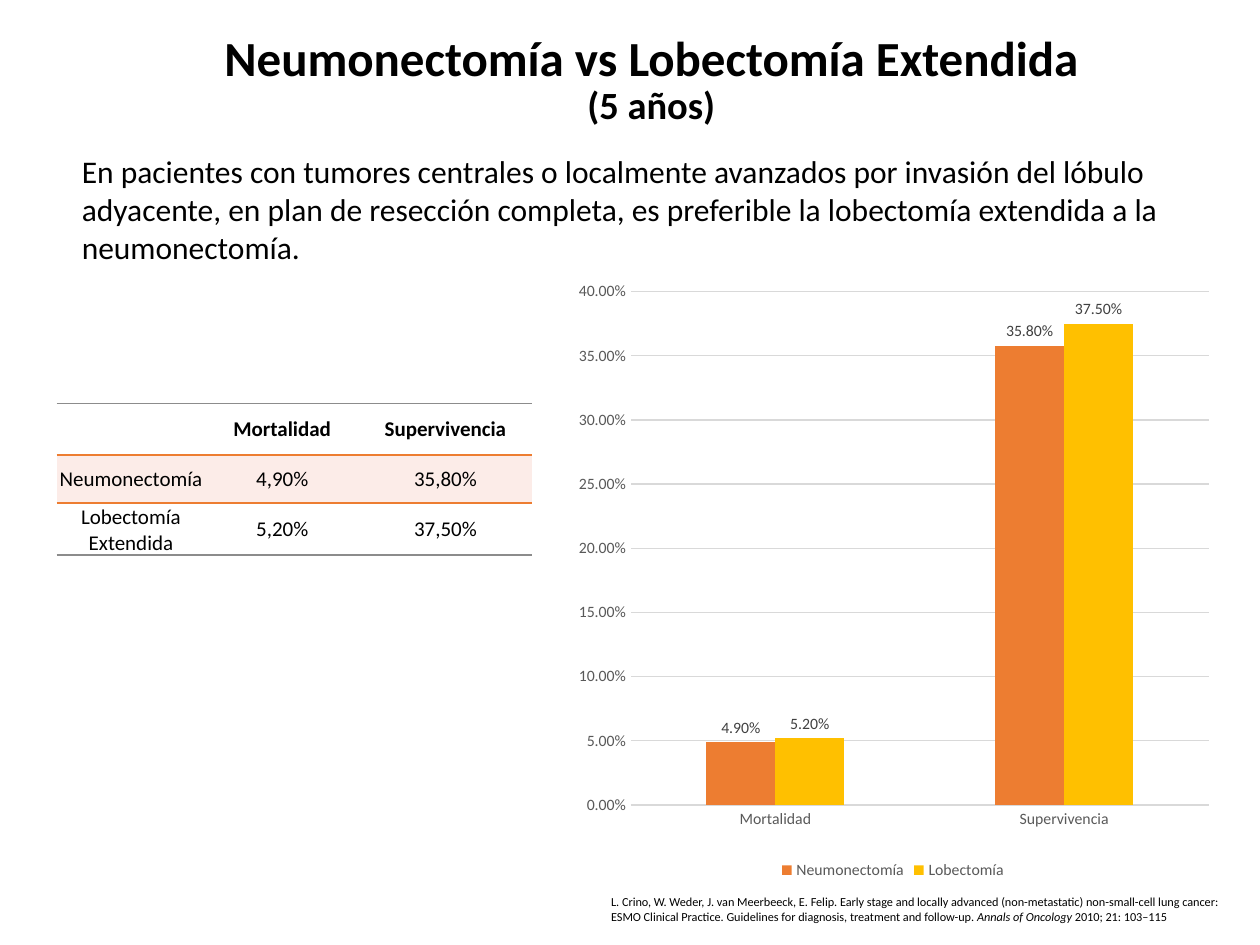
from dataclasses import dataclass

import pptx
import pptx.chart.data
import pptx.dml.color
import pptx.enum.chart
import pptx.enum.text
import pptx.oxml
import pptx.oxml.ns
import pptx.util
from lxml import etree

Cm = pptx.util.Cm
Pt = pptx.util.Pt
ALIGN = pptx.enum.text.PP_ALIGN
MIDDLE = pptx.enum.text.MSO_ANCHOR.MIDDLE


@dataclass(frozen=True)
class Theme:
    font: str = "Calibri"
    ink: str = "000000"
    label: str = "404040"
    axis: str = "595959"
    grid: str = "D9D9D9"
    rule: str = "8C8C8C"
    band: str = "FCECE8"
    orange: str = "ED7D31"
    gold: str = "FFC000"
    title: int = 28
    years: int = 22
    body: int = 18
    cell: int = 12
    chart: int = 9
    cite: int = 7


THEME = Theme()


def rgb(code):
    return pptx.dml.color.RGBColor.from_string(code)


def style(font, size, color=THEME.ink, bold=False):
    font.name = THEME.font
    font.size = Pt(size)
    font.bold = bold
    font.color.rgb = rgb(color)


def add_title(slide, main, years):
    title = slide.shapes.title
    title.left, title.top = Cm(3.96), Cm(0.53)
    title.width, title.height = Cm(18.34), Cm(2.21)
    frame = title.text_frame
    frame.word_wrap = True
    frame.auto_size = pptx.enum.text.MSO_AUTO_SIZE.NONE
    frame.vertical_anchor = MIDDLE
    para = frame.paragraphs[0]
    para.alignment = ALIGN.CENTER
    para.line_spacing = 0.9
    style(para.font, THEME.title, bold=True)
    para.add_run().text = main
    para.add_line_break()
    run = para.add_run()
    run.text = years
    run.font.size = Pt(THEME.years)


def add_text(slide, box, parts, size):
    """Add one paragraph from (text, italic) parts."""
    frame = slide.shapes.add_textbox(*map(Cm, box)).text_frame
    frame.word_wrap = True
    para = frame.paragraphs[0]
    style(para.font, size)
    for text, italic in parts:
        run = para.add_run()
        run.text = text
        if italic:
            run.font.italic = True


def add_edge(cell, side, color):
    props = cell._tc.get_or_add_tcPr()
    line = etree.SubElement(props, pptx.oxml.ns.qn(f"a:ln{side}"), w=str(Pt(1)))
    fill = etree.SubElement(line, pptx.oxml.ns.qn("a:solidFill"))
    etree.SubElement(fill, pptx.oxml.ns.qn("a:srgbClr"), val=color)


def fill_cell(cell, text, bold):
    cell.margin_left = cell.margin_right = cell.margin_top = Cm(0.03)
    cell.margin_bottom = 0
    cell.vertical_anchor = MIDDLE
    para = cell.text_frame.paragraphs[0]
    para.text = text
    para.alignment = ALIGN.CENTER
    style(para.font, THEME.cell, bold=bold)


def add_table(slide, rows):
    widths, heights = (3, 3.1, 3.48), (1.04, 0.97, 1.04)
    table = slide.shapes.add_table(
        len(rows), len(widths), Cm(1.14), Cm(8.13),
        Cm(sum(widths)), Cm(sum(heights))).table
    table.horz_banding = False
    plain = "{2D5ABB26-0587-4C30-8999-92F81FD0307C}"
    table._tbl.tblPr.find(pptx.oxml.ns.qn("a:tableStyleId")).text = plain
    for col, width in zip(table.columns, widths):
        col.width = Cm(width)
    edges = (
        (("T", THEME.rule), ("B", THEME.orange)),
        (("T", THEME.orange),),
        (("B", THEME.rule),),
    )
    for i, texts in enumerate(rows):
        table.rows[i].height = Cm(heights[i])
        for j, text in enumerate(texts):
            cell = table.cell(i, j)
            fill_cell(cell, text, bold=i == 0)
            for side, color in edges[i]:
                add_edge(cell, side, color)
            if i == 1:
                cell.fill.solid()
                cell.fill.fore_color.rgb = rgb(THEME.band)
            else:
                cell.fill.background()


def place_plot(chart, x, y, w, h):
    """Fix the inner plot area, in parts of the chart size."""
    area = chart._chartSpace.chart.plotArea
    for old in area.findall(pptx.oxml.ns.qn("c:layout")):
        area.remove(old)
    area.insert(0, pptx.oxml.parse_xml(
        f'<c:layout {pptx.oxml.ns.nsdecls("c")}><c:manualLayout>'
        '<c:layoutTarget val="inner"/>'
        '<c:xMode val="edge"/><c:yMode val="edge"/>'
        f'<c:x val="{x}"/><c:y val="{y}"/><c:w val="{w}"/><c:h val="{h}"/>'
        '</c:manualLayout></c:layout>'))


def style_axes(chart):
    none = pptx.enum.chart.XL_TICK_MARK.NONE
    for axis in (chart.category_axis, chart.value_axis):
        axis.major_tick_mark = axis.minor_tick_mark = none
        style(axis.tick_labels.font, THEME.chart, THEME.axis)
    values = chart.value_axis
    values.minimum_scale, values.maximum_scale, values.major_unit = 0, 0.4, 0.05
    values.tick_labels.number_format = "0.00%"
    values.tick_labels.number_format_is_linked = False
    values.format.line.fill.background()
    for line in (values.major_gridlines.format.line,
                 chart.category_axis.format.line):
        line.color.rgb = rgb(THEME.grid)
        line.width = Pt(0.75)


def add_chart(slide, cats, series):
    data = pptx.chart.data.CategoryChartData(number_format="0.00%")
    data.categories = cats
    for name, vals, _ in series:
        data.add_series(name, vals)
    chart = slide.shapes.add_chart(
        pptx.enum.chart.XL_CHART_TYPE.COLUMN_CLUSTERED,
        Cm(11.23), Cm(5.51), Cm(13.54), Cm(12.32), data).chart
    style(chart.font, 10)
    chart.has_title = False
    chart.has_legend = True
    chart.legend.position = pptx.enum.chart.XL_LEGEND_POSITION.BOTTOM
    chart.legend.include_in_layout = False
    style(chart.legend.font, THEME.chart, THEME.axis)
    style_axes(chart)
    plot = chart.plots[0]
    plot.gap_width, plot.overlap = 219, 0
    plot.vary_by_categories = False
    for bars, (_, _, color) in zip(plot.series, series):
        bars.format.fill.solid()
        bars.format.fill.fore_color.rgb = rgb(color)
        labels = bars.data_labels
        labels.show_value = True
        labels.number_format = "0.00%"
        labels.number_format_is_linked = False
        labels.position = pptx.enum.chart.XL_LABEL_POSITION.OUTSIDE_END
        style(labels.font, THEME.chart, THEME.label)
    place_plot(chart, 0.11, 0.03, 0.86, 0.84)


def main():
    deck = pptx.Presentation()
    deck.slide_width, deck.slide_height = Cm(25.4), Cm(19.05)
    slide = deck.slides.add_slide(deck.slide_layouts[5])
    add_title(slide, "Neumonectomía vs Lobectomía Extendida", "(5 años)")
    add_text(slide, (1.4, 2.95, 22.56, 2.57), [(
        "En pacientes con tumores centrales o localmente avanzados por "
        "invasión del lóbulo adyacente, en plan de resección completa, es "
        "preferible la lobectomía extendida a la neumonectomía.", False)],
        THEME.body)
    add_table(slide, (
        ("", "Mortalidad", "Supervivencia"),
        ("Neumonectomía", "4,90%", "35,80%"),
        ("Lobectomía Extendida", "5,20%", "37,50%")))
    add_chart(slide, ("Mortalidad", "Supervivencia"), (
        ("Neumonectomía", (0.049, 0.358), THEME.orange),
        ("Lobectomía", (0.052, 0.375), THEME.gold)))
    add_text(slide, (12.07, 17.9, 13.13, 0.86), [
        ("L. Crino, W. Weder, J. van Meerbeeck, E. Felip. Early stage and "
         "locally advanced (non-metastatic) non-small-cell lung cancer: ESMO "
         "Clinical Practice. Guidelines for diagnosis, treatment and "
         "follow-up. ", False),
        ("Annals of Oncology ", True),
        ("2010; 21: 103–115", False)], THEME.cite)
    deck.save("out.pptx")


if __name__ == "__main__":
    main()
